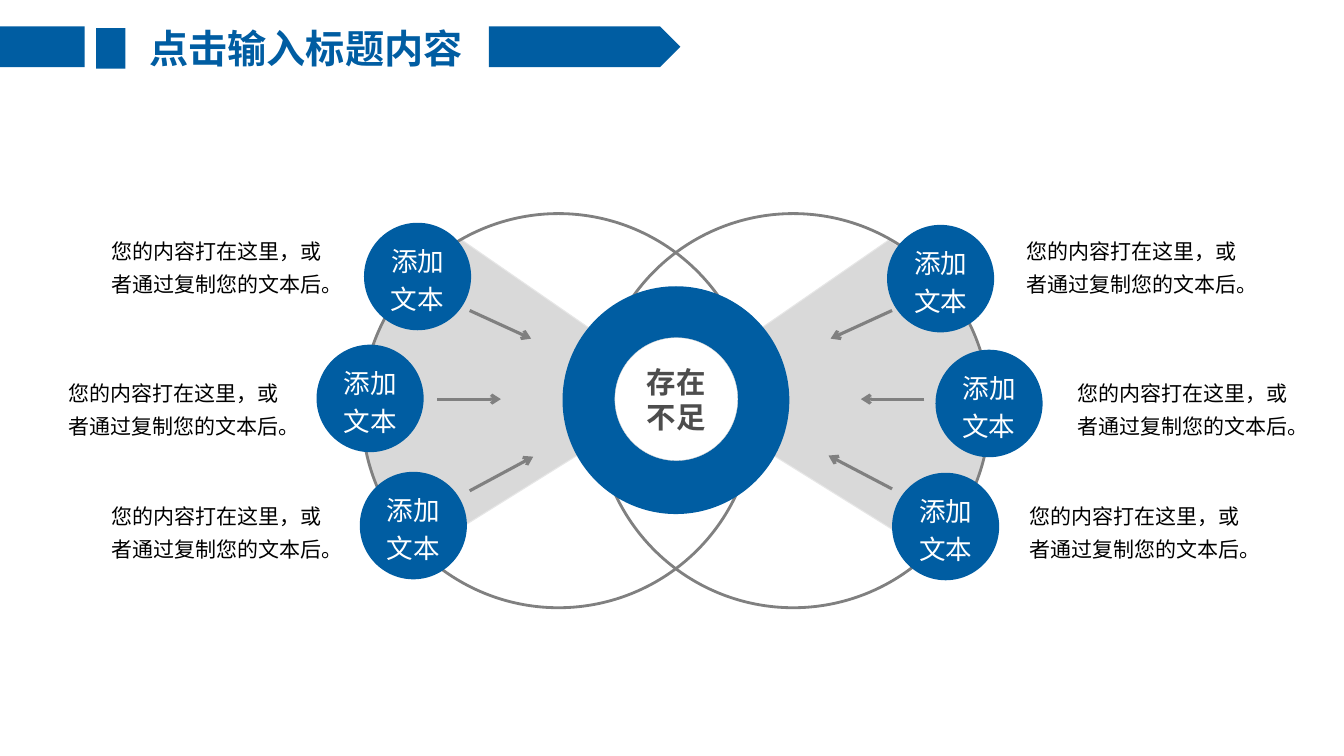
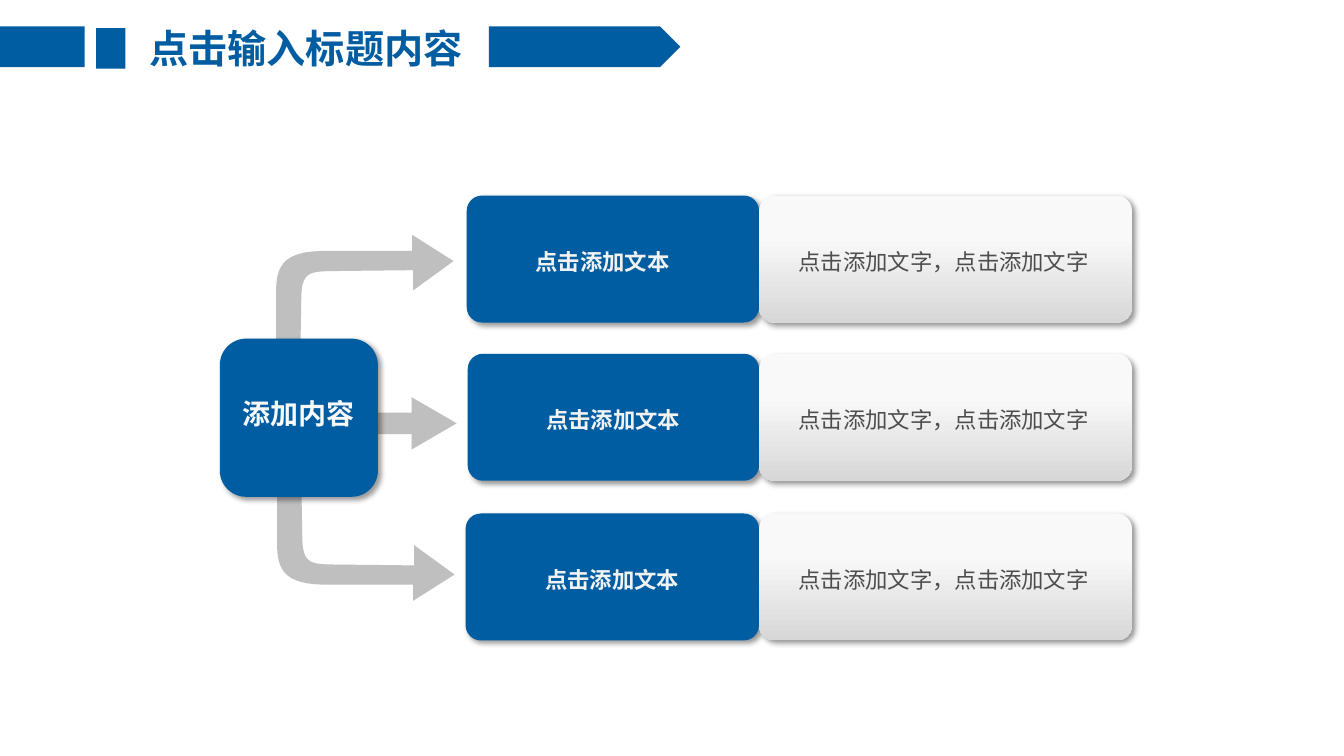
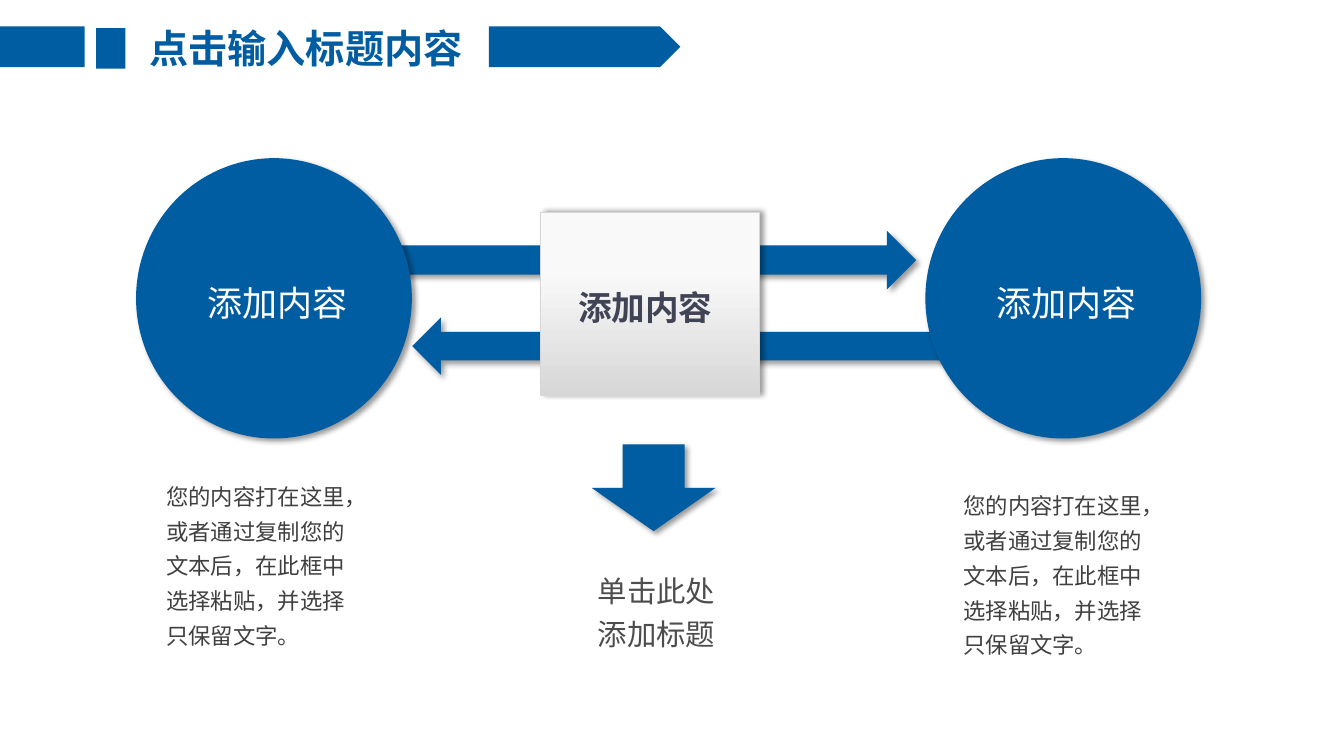
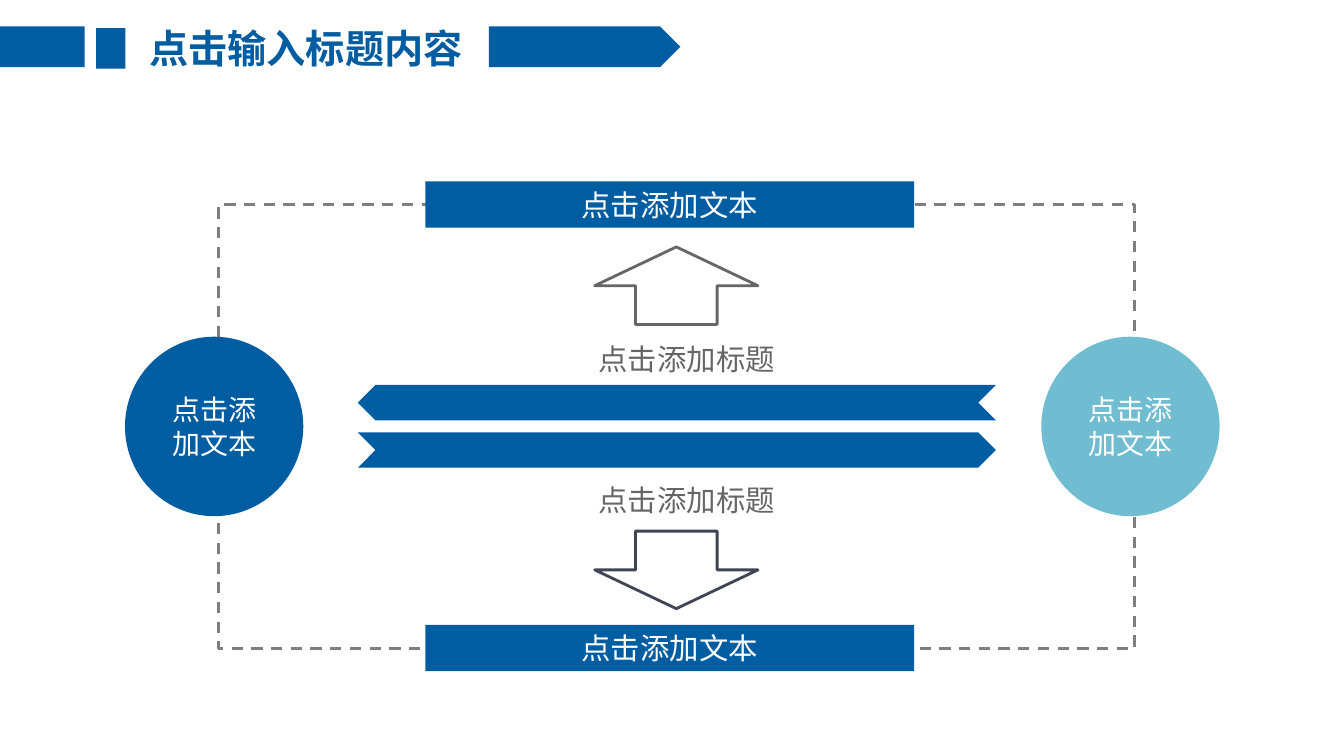
from lxml.etree import SubElement
from pptx import Presentation
from pptx.dml.color import RGBColor
from pptx.enum.dml import MSO_LINE
from pptx.enum.shapes import MSO_CONNECTOR, MSO_SHAPE as Kind
from pptx.enum.text import MSO_ANCHOR as Anchor, PP_ALIGN as Align
from pptx.oxml.ns import qn
from pptx.util import Pt

rgb = RGBColor.from_string
BLUE, WHITE, GREY, DARK = "005DA2", "FFFFFF", "808080", "4D4D4D"
SILVER = ("F9F9F9", "D7D7D7")
FONT = "Noto Sans CJK SC"
INSET = (7.2, 3.6, 7.2, 3.6)
WIDE = (10, 5, 10, 5)


def style(shape, fill=None, line=None, width=2, shade=None, text="", size=16,
          color=WHITE, bold=False, align=Align.CENTER, anchor=Anchor.MIDDLE,
          space=1.0, inset=INSET, font=FONT):
    """Set fill (hex, or a pair for a gradient), line, shadow angle and text."""
    if fill is None:
        shape.fill.background()
    elif isinstance(fill, tuple):
        shape.fill.gradient()
        shape.fill.gradient_angle = 270
        for stop, tone, place in zip(shape.fill.gradient_stops, fill, (0.33, 1)):
            stop.color.rgb = rgb(tone)
            stop.position = place
    else:
        shape.fill.solid()
        shape.fill.fore_color.rgb = rgb(fill)
    if line:
        shape.line.color.rgb = rgb(line)
        shape.line.width = Pt(width)
    else:
        shape.line.fill.background()

    shape.shadow.inherit = False
    if shade is not None:
        effects = shape.element.spPr.find(qn("a:effectLst"))
        outer = SubElement(effects, qn("a:outerShdw"), blurRad=str(Pt(4)),
                           dist=str(Pt(3)), dir=str(shade * 60000),
                           algn="tl", rotWithShape="0")
        black = SubElement(outer, qn("a:srgbClr"), val="000000")
        SubElement(black, qn("a:alpha"), val="40000")

    if text:
        frame = shape.text_frame
        frame.text = text
        frame.word_wrap = True
        frame.vertical_anchor = anchor
        (frame.margin_left, frame.margin_top,
         frame.margin_right, frame.margin_bottom) = map(Pt, inset)
        para = frame.paragraphs[0]
        para.alignment = align
        para.line_spacing = space
        run = para.runs[0]
        run.font.name = font
        run.font.size = Pt(size)
        run.font.bold = bold
        run.font.color.rgb = rgb(color)
        SubElement(run._r.get_or_add_rPr(), qn("a:ea"), typeface=FONT)
    return shape


def trace(steps):
    """Turn steps (2 numbers: a corner, 6: a cubic curve) into points."""
    points = []
    for step in steps:
        if len(step) == 2:
            points.append(step)
            continue
        ax, ay = points[-1]
        bx, by, cx, cy, dx, dy = step
        for n in range(1, 13):
            t = n / 12
            u = 1 - t
            points.append((
                u**3 * ax + 3 * u * u * t * bx + 3 * u * t * t * cx + t**3 * dx,
                u**3 * ay + 3 * u * u * t * by + 3 * u * t * t * cy + t**3 * dy))
    return points


deck = Presentation()
deck.slide_width, deck.slide_height = Pt(960), Pt(540)

# Title and bands of every slide
pages = []
for _ in range(4):
    slide = deck.slides.add_slide(deck.slide_layouts[5])
    title = slide.shapes.title
    title.left, title.top, title.width, title.height = map(Pt, (89.3, 13.7, 258.5, 41))
    style(title, text="点击输入标题内容", size=28, color=BLUE, bold=True)
    for kind, box in ((Kind.PENTAGON, (349.2, 18.9, 136.8, 29)),
                      (Kind.RECTANGLE, (0, 18.9, 60.5, 29)),
                      (Kind.RECTANGLE, (68.6, 20, 21, 29))):
        style(slide.shapes.add_shape(kind, *map(Pt, box)), BLUE)
    pages.append(slide.shapes)

# Slide 1: two circles around a ring
shapes = pages[0]
wedge = trace([(686.9, 222.5), (664.6, 192.2, 669.6, 194.4, 635, 171.4),
               (478.8, 279.4), (663.8, 394.6),
               (709.2, 339.8, 704.2, 320.4, 706.3, 291.6),
               (704.9, 267.8, 699.8, 243.4, 686.9, 222.5)])
for points in (wedge, [(964.8 - x, y) for x, y in wedge]):
    points = [(Pt(x), Pt(y)) for x, y in points]
    pen = shapes.build_freeform(*points[0])
    pen.add_line_segments(points[1:])
    style(pen.convert_to_shape(), "D9D9D9", "E6E6E6", 0.75)
for left in (258.5, 426.2):
    ring = shapes.add_shape(Kind.OVAL, Pt(left), Pt(152.6), Pt(280.8), Pt(281.5))
    style(ring, line=GREY)
hub = shapes.add_shape(Kind.OVAL, Pt(401.8), Pt(204.5), Pt(162), Pt(162.7))
style(hub, BLUE)
core = shapes.add_shape(Kind.OVAL, Pt(439.2), Pt(241.2), Pt(87.8), Pt(87.8))
style(core, WHITE, "D7D7D7", 0.25, text="存在不足", size=21, color=DARK,
      bold=True, font="Roboto Condensed")

# Each spoke: circle corner, note corner, arrow ends
spokes = [
    ((260, 159.1), (72.7, 161.3), (335.5, 221.8, 379.4, 241.9)),
    ((226.1, 246.2), (41.8, 262.8), (312.5, 285.1, 357.8, 285.1)),
    ((257, 337), (72.7, 350.6), (335.5, 350.6, 380.9, 326.2)),
    ((633.6, 160.6), (726.5, 161.3), (637.2, 221.8, 593.3, 241.9)),
    ((668.2, 249.8), (762.5, 262.8), (660.2, 285.1, 614.9, 285.1)),
    ((637.2, 337.7), (728.6, 350.6), (637.2, 349.2, 591.8, 325.4)),
]
for spot, place, ends in spokes:
    arrow = shapes.add_connector(MSO_CONNECTOR.STRAIGHT, *map(Pt, ends))
    arrow.line.color.rgb = rgb(GREY)
    arrow.line.width = Pt(2.25)
    SubElement(arrow.line._get_or_add_ln(), qn("a:tailEnd"), type="arrow")
    SubElement(arrow.element.spPr, qn("a:effectLst"))
    disc = shapes.add_shape(Kind.OVAL, *map(Pt, spot), Pt(76.5), Pt(76.8))
    style(disc, BLUE, text="添加文本", size=19, space=1.2, font="Arial")
    note = shapes.add_textbox(*map(Pt, place), Pt(166), Pt(54.7))
    style(note, text="您的内容打在这里，或者通过复制您的文本后。", size=15,
          color="000000", align=Align.LEFT, anchor=Anchor.TOP, space=1.3)

# Slide 2: one box leading to three rows
shapes = pages[1]
bend = trace([(213.8, 298.1), (215.3, 210.2),
              (216, 194.4, 222.5, 194.4, 233.3, 193.7),
              (295.2, 193), (295.2, 207.4), (324, 186.5), (294.5, 167.8),
              (294.5, 179.3), (229.7, 179.3),
              (205.9, 180, 198, 187.2, 197.3, 205.2), (197.3, 300.2),
              (200.2, 315.4, 210.2, 313.9, 213.8, 298.1)])
for points in (bend, [(x + 0.7, 596.9 - y) for x, y in bend]):
    points = [(Pt(x), Pt(y)) for x, y in points]
    pen = shapes.build_freeform(*points[0])
    pen.add_line_segments(points[1:])
    style(pen.convert_to_shape(), "BFBFBF")
arrow = shapes.add_shape(Kind.RIGHT_ARROW, Pt(175.7), Pt(283.7), Pt(150.5), Pt(37.4))
arrow.adjustments[0], arrow.adjustments[1] = 0.41, 0.86
style(arrow, "BFBFBF")

rows = [(333.4, 139.7, Align.LEFT, (46, 3.6, 7.2, 3.6)),
        (334.1, 252.7, Align.CENTER, INSET),
        (332.6, 366.8, Align.CENTER, INSET)]
for left, top, align, inset in rows:
    label = shapes.add_shape(Kind.ROUNDED_RECTANGLE, Pt(left), Pt(top),
                             Pt(542.2 - left), Pt(90.7))
    label.adjustments[0] = 0.12
    style(label, BLUE, shade=45, text="点击添加文本", color="F2F2F2", bold=True,
          align=align, space=1.2, inset=inset)
    panel = shapes.add_shape(Kind.ROUNDED_RECTANGLE, Pt(542.2), Pt(top),
                             Pt(266.4), Pt(90.7))
    panel.adjustments[0] = 0.12
    style(panel, SILVER, shade=45, text="点击添加文字，点击添加文字", color=DARK,
          align=Align.LEFT, space=1.2, inset=(25, 3.6, 7.2, 3.6))
root = shapes.add_shape(Kind.ROUNDED_RECTANGLE, Pt(157), Pt(241.9), Pt(113), Pt(113))
style(root, BLUE, shade=45, text="添加内容", size=20, color="F9F9F9", bold=True,
      space=1.2, inset=(10, 3.6, 10, 14.4))

# Slide 3: exchange between two circles
shapes = pages[2]
for kind, box in ((Kind.RIGHT_ARROW, (280.8, 164.9, 373.7, 41.8)),
                  (Kind.LEFT_ARROW, (294.5, 226.8, 386.6, 41)),
                  (Kind.DOWN_ARROW, (422.6, 317.5, 88.6, 61.9))):
    style(shapes.add_shape(kind, *map(Pt, box)), BLUE, shade=45)
for left, place in ((97.2, (108.7, 334.1)), (661, (678.2, 340.6))):
    disc = shapes.add_shape(Kind.OVAL, Pt(left), Pt(113), Pt(197), Pt(200.2))
    style(disc, BLUE, shade=45, text="添加内容", size=25, align=Align.LEFT,
          space=1.2, inset=(22, 5, 10, 5))
    note = shapes.add_textbox(*map(Pt, place), Pt(162.7), Pt(139))
    style(note, text="您的内容打在这里，或者通过复制您的文本后，在此框中选择粘贴，并选择只保留文字。",
          color="404040", align=Align.LEFT, anchor=Anchor.TOP, space=1.3, inset=WIDE)
middle = shapes.add_shape(Kind.RECTANGLE, Pt(385.9), Pt(151.2), Pt(156.2), Pt(131))
style(middle, SILVER, "D7D7D7", 0.25, shade=0, text="添加内容", size=24,
      color="414455", bold=True, align=Align.LEFT, space=1.2, inset=(27, 5, 10, 5))
result = shapes.add_textbox(Pt(416.9), Pt(399.6), Pt(123.8), Pt(71.3))
style(result, text="单击此处添加标题", size=21, color=DARK, align=Align.LEFT,
      anchor=Anchor.TOP, space=1.2, inset=WIDE)

# Slide 4: dashed loop
shapes = pages[3]
loop = shapes.add_shape(Kind.RECTANGLE, Pt(156.2), Pt(146.2), Pt(654.5), Pt(316.8))
style(loop, line="7F7F7F")
loop.line.dash_style = MSO_LINE.DASH
for left, fill in ((89.3, BLUE), (743.8, "70BDD2")):
    disc = shapes.add_shape(Kind.OVAL, Pt(left), Pt(240.5), Pt(127.4), Pt(128.2))
    style(disc, fill, text="点击添加文本", size=20)
# Each half: bar, arrow and label tops, chevron top and turn
halves = [(129.6, Kind.UP_ARROW, 176.4, "666666", 239.8, 275, 180),
          (446.4, Kind.DOWN_ARROW, 379.4, "414455", 340.6, 308.9, 0)]
for high, kind, top, line, low, band, turn in halves:
    bar = shapes.add_shape(Kind.RECTANGLE, Pt(303.8), Pt(high), Pt(349.2), Pt(33.1))
    style(bar, BLUE, text="点击添加文本", size=21)
    arrow = shapes.add_shape(kind, Pt(424.8), Pt(top), Pt(116.6), Pt(55.4))
    style(arrow, line=line)
    label = shapes.add_textbox(Pt(420.5), Pt(low), Pt(150), Pt(33.1))
    style(label, text="点击添加标题", size=21, color="666666", align=Align.LEFT,
          anchor=Anchor.TOP)
    ribbon = shapes.add_shape(Kind.CHEVRON, Pt(255.6), Pt(band), Pt(455.8), Pt(25.2))
    ribbon.rotation = turn
    style(ribbon, BLUE)

deck.save("out.pptx")
